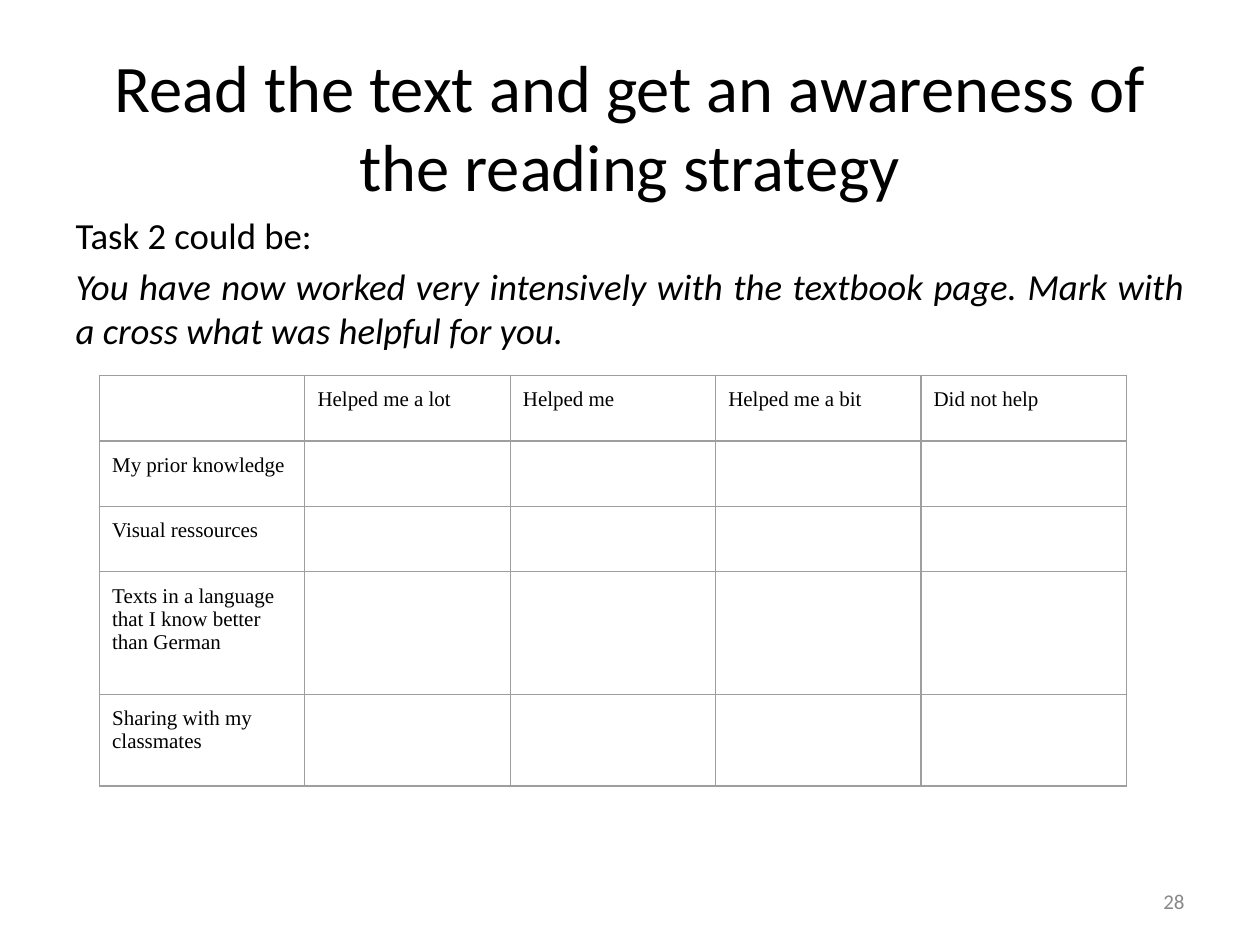
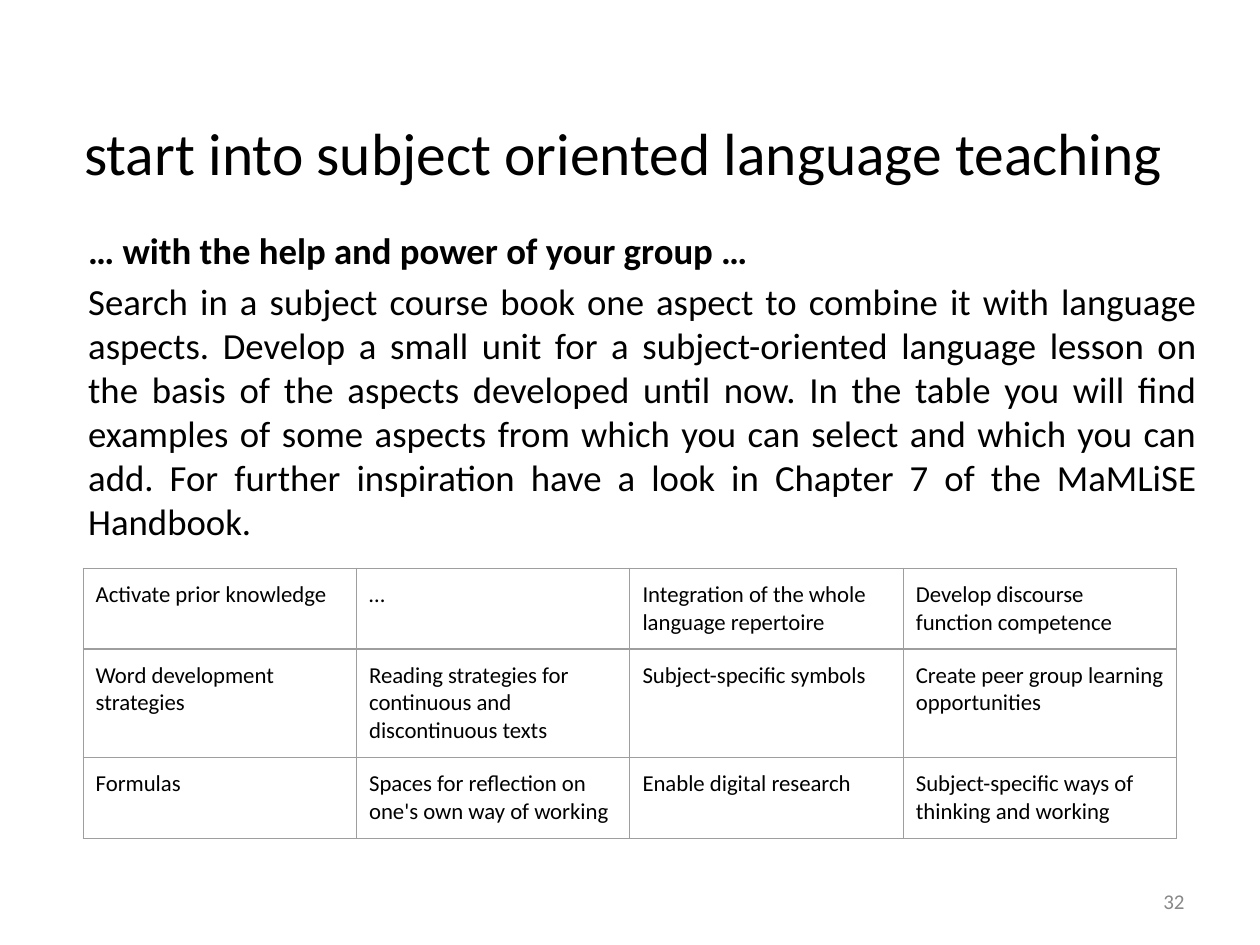
from lxml.etree import SubElement
from pptx import Presentation
from pptx.dml.color import RGBColor
from pptx.enum.text import MSO_ANCHOR, MSO_AUTO_SIZE, PP_ALIGN
from pptx.oxml.ns import qn
from pptx.util import Inches, Pt

# Shared look
FONT, SERIF = "Calibri", "Times New Roman"
BLACK, GREY, RULE = "000000", "888888", "9E9E9E"


def color(code):
    return RGBColor.from_string(code)


def place(shape, left, top, width, height):
    shape.left, shape.top = Inches(left), Inches(top)
    shape.width, shape.height = Inches(width), Inches(height)


def style(par, size, align=None, face=FONT, tint=BLACK):
    par.alignment = align
    par.font.size = Pt(size)
    par.font.name = face
    par.font.color.rgb = color(tint)


def add_title(slide, text, top, size):
    title = slide.shapes.title
    place(title, 0.5, top, 9, 1.25)
    frame = title.text_frame
    frame.text = text
    frame.auto_size = MSO_AUTO_SIZE.NONE
    frame.vertical_anchor = MSO_ANCHOR.MIDDLE
    style(frame.paragraphs[0], size, PP_ALIGN.CENTER)


def add_body(slide, lines, left, top, height):
    """Fill the body with justified paragraphs and return them."""
    body = slide.placeholders[1]
    place(body, left, top, 9, height)
    frame = body.text_frame
    frame.text = "\n".join(lines)
    frame.auto_size = MSO_AUTO_SIZE.NONE
    for i, par in enumerate(frame.paragraphs):
        props = par._p.get_or_add_pPr()
        props.set("marL", "0")
        props.set("indent", "0")
        SubElement(props, qn("a:buNone"))
        par.space_before = Pt(3.6 if i else 0)
        style(par, 21, PP_ALIGN.JUSTIFY)
    return frame.paragraphs


def add_border(cell):
    props = cell._tc.get_or_add_tcPr()
    for side in ("lnL", "lnR", "lnT", "lnB"):
        line = SubElement(props, qn(f"a:{side}"), w=str(Pt(0.75)))
        fill = SubElement(line, qn("a:solidFill"))
        SubElement(fill, qn("a:srgbClr"), val=RULE)


def add_grid(slide, rows, left, top, width, heights, size, face):
    """Add a ruled table with equal columns of the given width."""
    count = len(rows[0])
    frame = slide.shapes.add_table(
        len(rows), count, Inches(left), Inches(top),
        Inches(width * count), Inches(sum(heights)))
    table = frame.table
    table.first_row = table.horz_banding = False
    for col in table.columns:
        col.width = Inches(width)
    for row, height, texts in zip(table.rows, heights, rows):
        row.height = Inches(height)
        for cell, text in zip(row.cells, texts):
            cell.text = text
            cell.margin_left = cell.margin_right = Inches(0.1)
            cell.margin_top = cell.margin_bottom = Inches(0.1)
            style(cell.text_frame.paragraphs[0], size, face=face)
            add_border(cell)
            cell.fill.background()


def add_number(slide, number):
    box = slide.shapes.add_textbox(
        Inches(7.17), Inches(6.95), Inches(2.33), Inches(0.4))
    frame = box.text_frame
    frame.word_wrap = True
    frame.vertical_anchor = MSO_ANCHOR.MIDDLE
    frame.text = str(number)
    style(frame.paragraphs[0], 12, PP_ALIGN.RIGHT, tint=GREY)


def add_survey(deck):
    slide = deck.slides.add_slide(deck.slide_layouts[1])
    add_title(slide, "Read the text and get an awareness of the reading strategy",
              0.37, 38)
    pars = add_body(slide, [
        "Task 2 could be:",
        "You have now worked very intensively with the textbook page. "
        "Mark with a cross what was helpful for you.",
    ], 0.5, 1.64, 3.71)
    pars[1].font.italic = True

    # Rating table with empty boxes to tick
    marks = ["Helped me a lot", "Helped me", "Helped me a bit", "Did not help"]
    aids = ["My prior knowledge", "Visual ressources",
            "Texts in a language that I know better than German",
            "Sharing with my classmates"]
    rows = [["", *marks]] + [[aid] + [""] * len(marks) for aid in aids]
    add_grid(slide, rows, 0.79, 2.98, 1.63, [0.52, 0.52, 0.52, 0.97, 0.73],
             12, SERIF)
    add_number(slide, 28)


def add_start(deck):
    slide = deck.slides.add_slide(deck.slide_layouts[1])
    add_title(slide, "start into subject oriented language teaching ", 0.58, 34)
    pars = add_body(slide, [
        "… with the help and power of your group …",
        "Search in a subject course book one aspect to combine it with language "
        "aspects. Develop a small unit for a subject-oriented language lesson on "
        "the basis of the aspects developed until now. In the table you will find "
        "examples of some aspects from which you can select and which you can "
        "add. For further inspiration have a look in Chapter 7 of the MaMLiSE "
        "Handbook.",
    ], 0.6, 1.76, 3.98)
    pars[0].font.bold = True

    # Aspects to choose from
    rows = [
        ["Activate prior knowledge", "…",
         "Integration of the whole language repertoire",
         "Develop discourse function competence"],
        ["Word development strategies",
         "Reading strategies for continuous and discontinuous texts",
         "Subject-specific symbols",
         "Create peer group learning opportunities"],
        ["Formulas", "Spaces for reflection on one's own way of working",
         "Enable digital research",
         "Subject-specific ways of thinking and working"],
    ]
    add_grid(slide, rows, 0.66, 4.51, 2.17, [0.64, 0.86, 0.64], 13, FONT)
    add_number(slide, 32)


def main():
    deck = Presentation()
    deck.slide_width, deck.slide_height = Inches(10), Inches(7.5)
    add_survey(deck)
    add_start(deck)
    deck.save("out.pptx")


if __name__ == "__main__":
    main()
